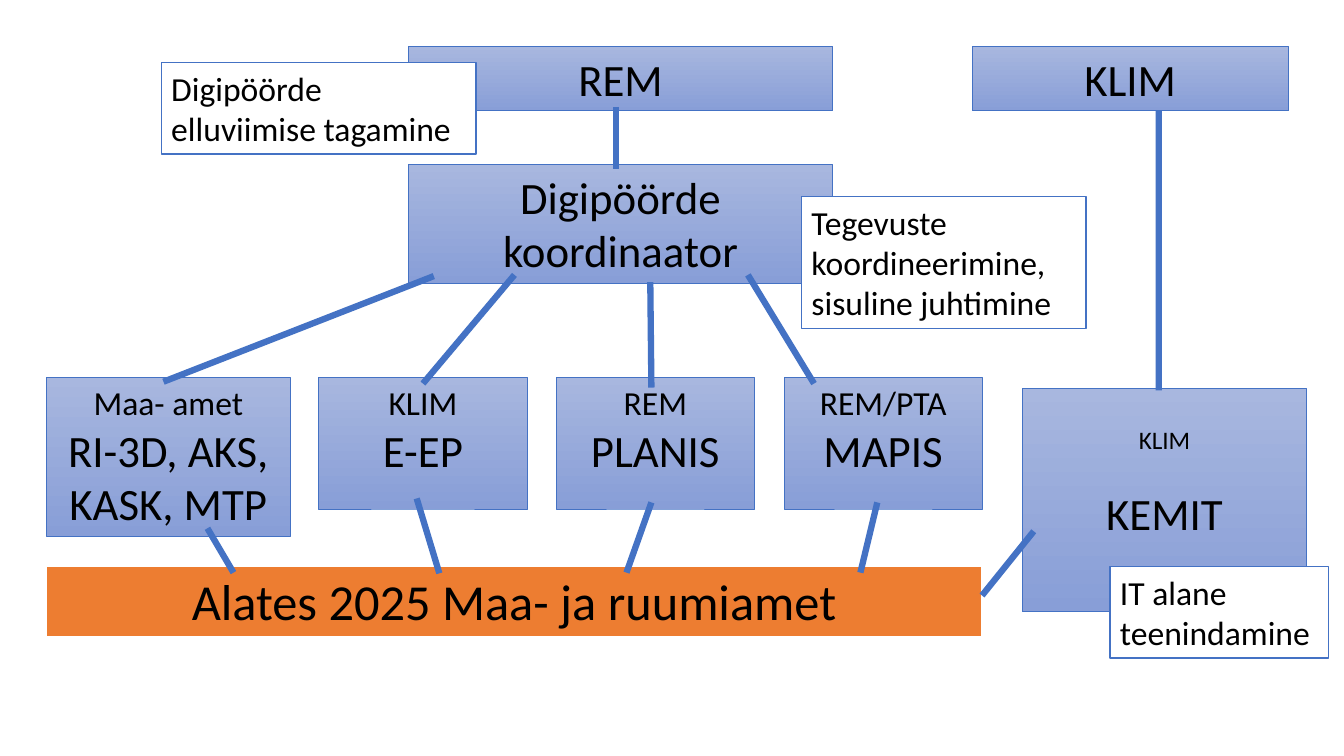
from lxml import etree
from pptx import Presentation
from pptx import util as u
from pptx.dml.color import RGBColor
from pptx.enum import shapes, text
from pptx.oxml.ns import qn

# Left edges and widths of the columns, tops and heights of the rows, in inches
COLS = {
    "lead": (4.05, 4.21), "ministry": (9.64, 3.14),
    "a": (0.46, 2.42), "b": (3.16, 2.07), "c": (5.52, 1.96), "d": (7.78, 1.96),
    "service": (10.14, 2.82), "all": (0.46, 9.28),
    "note_left": (1.6, 3.12), "note_mid": (7.95, 2.82), "note_right": (11.01, 2.17),
}
ROWS = {
    "top": (0.46, 0.64), "coordination": (1.63, 1.18),
    "systems": (3.74, 1.31), "systems_tall": (3.74, 1.58),
    "service": (3.85, 2.22), "agency": (5.61, 0.71),
    "note_top": (0.62, 0.91), "note_mid": (1.95, 1.31), "note_low": (5.62, 0.91),
}

# name: (style, column, row, [(text, size name), ...])
BOXES = {
    "rem": ("unit", "lead", "top", [("REM", "head")]),
    "note_rem": ("note", "note_left", "note_top",
                 [("Digipöörde elluviimise tagamine", "body")]),
    "coordinator": ("unit", "lead", "coordination", [("Digipöörde koordinaator", "head")]),
    "note_coordinator": ("note", "note_mid", "note_mid",
                         [("Tegevuste koordineerimine, sisuline juhtimine", "body")]),
    "agency": ("agency", "all", "agency", [("Alates 2025 Maa- ja ruumiamet", "agency")]),
    "kemit": ("service", "service", "service", [("KLIM", "small"), ("KEMIT", "head")]),
    "maaamet": ("unit", "a", "systems_tall",
                [("Maa- amet", "body"), ("RI-3D, AKS, KASK, MTP", "head")]),
    "eep": ("unit", "b", "systems", [("KLIM", "body"), ("E-EP", "head")]),
    "planis": ("unit", "c", "systems", [("REM", "body"), ("PLANIS", "head")]),
    "mapis": ("unit", "d", "systems", [("REM/PTA", "body"), ("MAPIS", "head")]),
    "note_kemit": ("note", "note_right", "note_low", [("IT alane teenindamine", "body")]),
    "klim": ("unit", "ministry", "top", [("KLIM", "head")]),
}

# Each end: box, share of its width, share of its height
LINKS = [
    (("rem", 0.49, 0.94), ("coordinator", 0.49, 0.04)),
    (("coordinator", 0.06, 0.94), ("maaamet", 0.48, 0.03)),
    (("coordinator", 0.25, 0.93), ("eep", 0.5, 0.05)),
    (("coordinator", 0.57, 0.99), ("planis", 0.48, 0.08)),
    (("coordinator", 0.8, 0.93), ("mapis", 0.15, 0.05)),
    (("klim", 0.59, 1), ("kemit", 0.48, 0.01)),
    (("agency", 0.2, 0.1), ("maaamet", 0.66, 0.95)),
    (("agency", 0.42, 0.11), ("eep", 0.47, 0.92)),
    (("agency", 0.62, 0.1), ("planis", 0.48, 0.95)),
    (("agency", 0.87, 0.1), ("mapis", 0.47, 0.95)),
    (("agency", 1, 0.42), ("kemit", 0.04, 0.64)),
]

CENTER, LEFT = text.PP_ALIGN.CENTER, text.PP_ALIGN.LEFT
UNIT = {"fill": ("A8B7DF", "889ED7"), "line": ("4472C4", 0.5), "align": CENTER}
THEME = {
    "font": "Calibri", "ink": "000000", "link": ("4472C4", 4.5),
    "size": {"small": 18, "body": 24, "head": 32, "agency": 36},
    "style": {
        "unit": UNIT,
        "service": {**UNIT, "inset": 0.36, "gap": 22},
        "note": {"fill": ("FFFFFF",), "line": ("4472C4", 1), "align": LEFT},
        "agency": {"fill": ("ED7D31",), "line": ("FFFFFF", 1.5), "align": CENTER},
    },
}


def rgb(value):
    return RGBColor.from_string(value)


def set_all(obj, values):
    for name, value in values.items():
        setattr(obj, name, value)


def set_line(line, color, width):
    line.color.rgb = rgb(color)
    line.width = u.Pt(width)


def set_fill(fill, colors):
    """One colour gives a solid fill, two a gradient from top to bottom."""
    if len(colors) == 1:
        fill.solid()
        fill.fore_color.rgb = rgb(colors[0])
        return
    fill.gradient()
    fill.gradient_angle = 270
    for stop, color in zip(fill.gradient_stops, colors):
        stop.color.rgb = rgb(color)


def add_box(slide, style, col, row, lines):
    (x, w), (y, h) = COLS[col], ROWS[row]
    look = THEME["style"][style]
    sp = slide.shapes.add_shape(shapes.MSO_SHAPE.RECTANGLE, *map(u.Inches, (x, y, w, h)))
    sp.shadow.inherit = False
    set_fill(sp.fill, look["fill"])
    set_line(sp.line, *look["line"])
    tf = sp.text_frame
    set_all(tf, {"word_wrap": True, "vertical_anchor": text.MSO_ANCHOR.TOP,
                 "margin_top": u.Inches(look.get("inset", 0.05))})
    for i, (words, size) in enumerate(lines):
        p = tf.add_paragraph() if i else tf.paragraphs[0]
        set_all(p, {"alignment": look["align"],
                    "space_before": u.Pt(look.get("gap", 0) if i else 0)})
        r = p.add_run()
        r.text = words
        set_all(r.font, {"name": THEME["font"], "size": u.Pt(THEME["size"][size])})
        r.font.color.rgb = rgb(THEME["ink"])


def point(name, share_x, share_y):
    _, col, row, _ = BOXES[name]
    (x, w), (y, h) = COLS[col], ROWS[row]
    return u.Inches(x + share_x * w), u.Inches(y + share_y * h)


def add_link(slide, start, end):
    line = slide.shapes.add_connector(
        shapes.MSO_CONNECTOR.STRAIGHT, *point(*start), *point(*end))
    set_line(line.line, *THEME["link"])
    etree.SubElement(line._element.spPr, qn("a:effectLst"))


def main():
    prs = Presentation()
    set_all(prs, {"slide_width": u.Inches(13.33), "slide_height": u.Inches(7.5)})
    slide = prs.slides.add_slide(prs.slide_layouts[6])
    for box in BOXES.values():
        add_box(slide, *box)
    for link in LINKS:
        add_link(slide, *link)
    prs.save("out.pptx")


if __name__ == "__main__":
    main()
